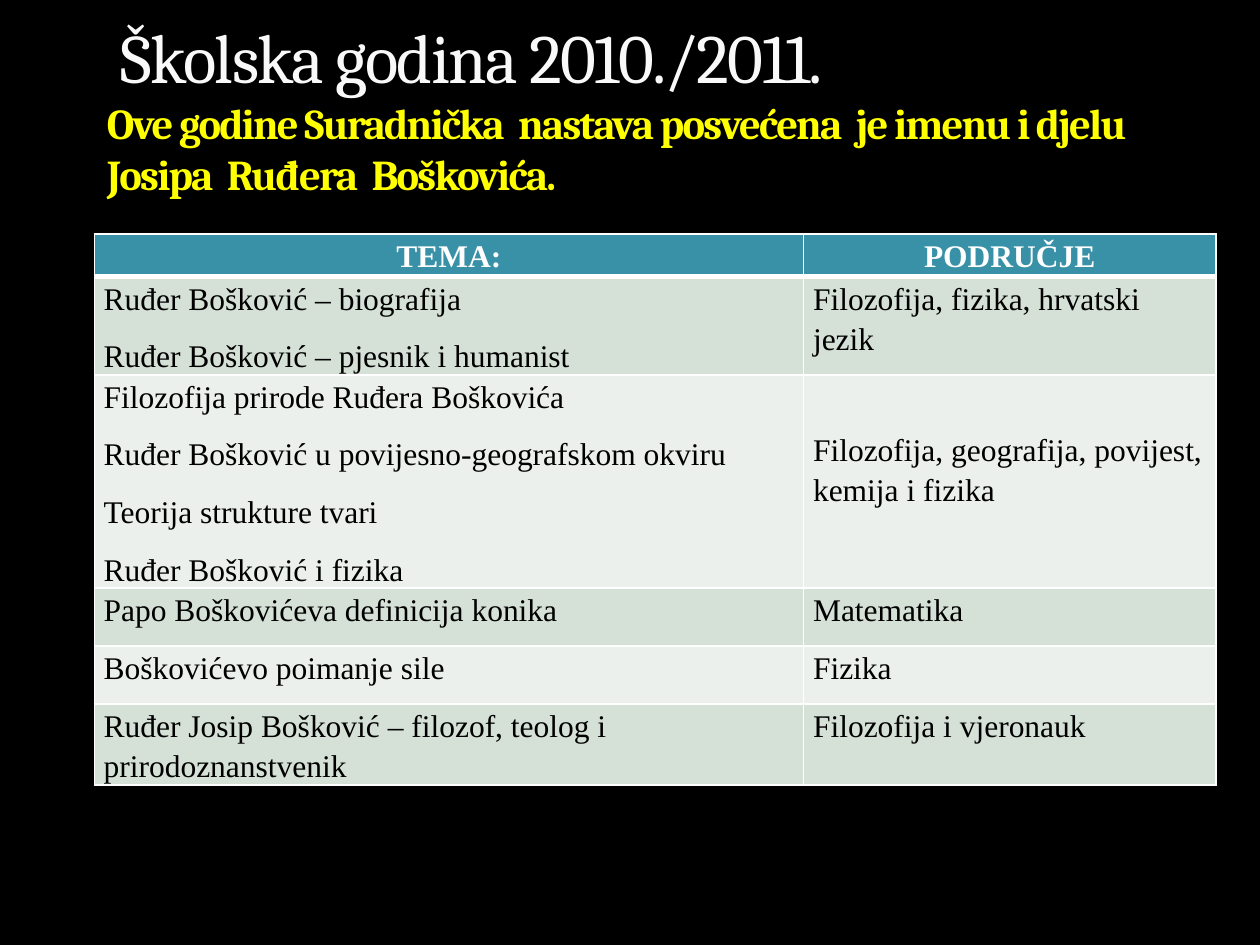
import pptx
import pptx.dml.color
import pptx.enum.text
import pptx.oxml
import pptx.oxml.ns
import pptx.util
from pptx.util import Cm

HEADING = " Školska godina 2010./2011."
DEDICATION = ("Ove godine Suradnička  nastava posvećena  je imenu i djelu  "
              "Josipa  Ruđera  Boškovića.")
HEADERS = ("TEMA:", "PODRUČJE")
# topics, subject area, row height in cm, space above the subject area in cm
TOPICS = [
    (["Ruđer Bošković – biografija", "Ruđer Bošković – pjesnik i humanist"],
     "Filozofija, fizika, hrvatski jezik", 1.98, 0),
    (["Filozofija prirode Ruđera Boškovića",
      "Ruđer Bošković u povijesno-geografskom okviru",
      "Teorija strukture tvari",
      "Ruđer Bošković i fizika"],
     "Filozofija, geografija, povijest, kemija i fizika", 4.29, 1.07),
    (["Papo Boškovićeva definicija konika"], "Matematika", 1.17, 0),
    (["Boškovićevo poimanje sile"], "Fizika", 1.17, 0),
    (["Ruđer Josip Bošković – filozof, teolog i prirodoznanstvenik"],
     "Filozofija i vjeronauk", 1.63, 0),
]
COLUMN_WIDTHS = (14.3, 8.31)
HEADER_HEIGHT = 0.86
HEADER_FILL = "3891A7"
BAND_FILLS = ("D5E0D6", "EBF0EC")
LEFT = Cm(1.9)
ALIGN = pptx.enum.text.PP_ALIGN


def rgb(value):
    return pptx.dml.color.RGBColor.from_string(value)


def write(paragraph, text, font="Times New Roman", size=18, color="000000",
          bold=False, align=ALIGN.LEFT, line=None, after=0, tracking=0):
    paragraph.alignment = align
    paragraph.line_spacing = line
    paragraph.space_after = pptx.util.Pt(after)
    run = paragraph.add_run()
    run.text = text
    run.font.name = font
    run.font.size = pptx.util.Pt(size)
    run.font.bold = bold
    run.font.color.rgb = rgb(color)
    if tracking:
        run.font._element.set("spc", str(tracking * 100))


def add_borders(cell, **widths):
    """Draw white cell borders; widths are points keyed by side L, R, T, B."""
    properties = cell._tc.get_or_add_tcPr()
    for side in "LRTB":
        width = pptx.util.Pt(widths.get(side, 1))
        properties.append(pptx.oxml.parse_xml(
            f'<a:ln{side} {pptx.oxml.ns.nsdecls("a")} w="{width}"><a:solidFill>'
            f'<a:srgbClr val="FFFFFF"/></a:solidFill></a:ln{side}>'))


def fill_cell(cell, lines, fill, borders, top=0, **text_format):
    cell.margin_left = cell.margin_right = Cm(0.19)
    cell.margin_top, cell.margin_bottom = Cm(top), 0
    add_borders(cell, **borders)
    cell.fill.solid()
    cell.fill.fore_color.rgb = rgb(fill)
    frame = cell.text_frame
    for index, line in enumerate(lines):
        paragraph = frame.add_paragraph() if index else frame.paragraphs[0]
        write(paragraph, line, line=1.15, **text_format)


def add_heading(slide):
    title = slide.shapes.title
    title.left, title.top = LEFT, Cm(0.74)
    title.width, title.height = Cm(21.79), Cm(3.4)
    frame = title.text_frame
    frame.word_wrap = True
    frame.auto_size = pptx.enum.text.MSO_AUTO_SIZE.NONE
    frame.vertical_anchor = pptx.enum.text.MSO_ANCHOR.BOTTOM
    write(frame.paragraphs[0], HEADING, font="Cambria", size=39.6,
          color="F9F9F9", tracking=-1)
    write(frame.add_paragraph(), DEDICATION, font="Cambria", size=24.3,
          color="FFFF00", bold=True, tracking=-1)


def add_topics(slide):
    heights = [HEADER_HEIGHT] + [topic[2] for topic in TOPICS]
    table = slide.shapes.add_table(
        len(heights), len(COLUMN_WIDTHS), LEFT, Cm(4.72),
        Cm(sum(COLUMN_WIDTHS)), Cm(sum(heights))).table
    for column, width in zip(table.columns, COLUMN_WIDTHS):
        column.width = Cm(width)
    for row, height in zip(table.rows, heights):
        row.height = Cm(height)

    for column, header in enumerate(HEADERS):
        fill_cell(table.cell(0, column), [header], HEADER_FILL, {"B": 3},
                  color="FFFFFF", bold=True, align=ALIGN.CENTER)
    for row, (topics, area, _, area_top) in enumerate(TOPICS, start=1):
        fill = BAND_FILLS[(row - 1) % 2]
        borders = {"T": 3} if row == 1 else {}
        fill_cell(table.cell(row, 0), topics, fill, borders, after=10)
        fill_cell(table.cell(row, 1), [area], fill, borders, top=area_top,
                  after=10)


def main():
    presentation = pptx.Presentation()
    presentation.slide_width, presentation.slide_height = Cm(25.4), Cm(19.05)
    slide = presentation.slides.add_slide(presentation.slide_layouts[5])
    slide.background.fill.solid()
    slide.background.fill.fore_color.rgb = rgb("000000")
    add_heading(slide)
    add_topics(slide)
    presentation.save("out.pptx")


if __name__ == "__main__":
    main()
